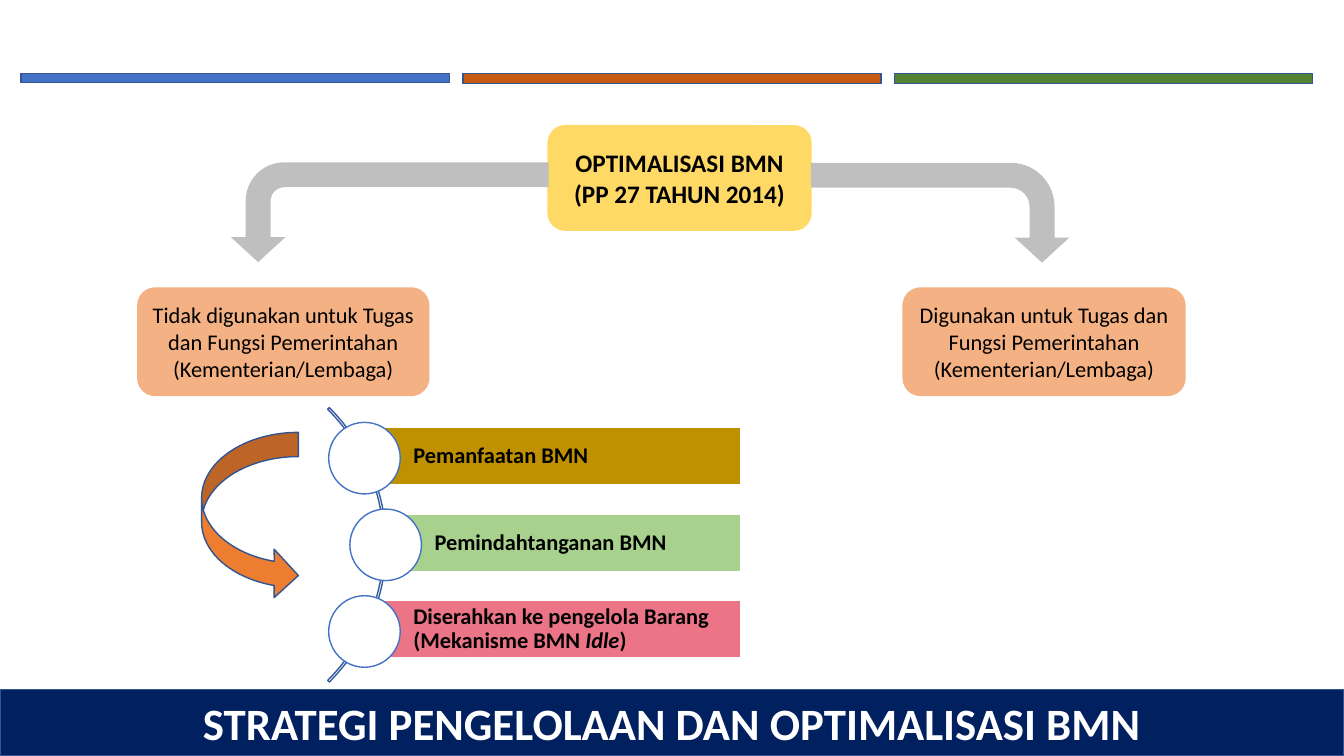
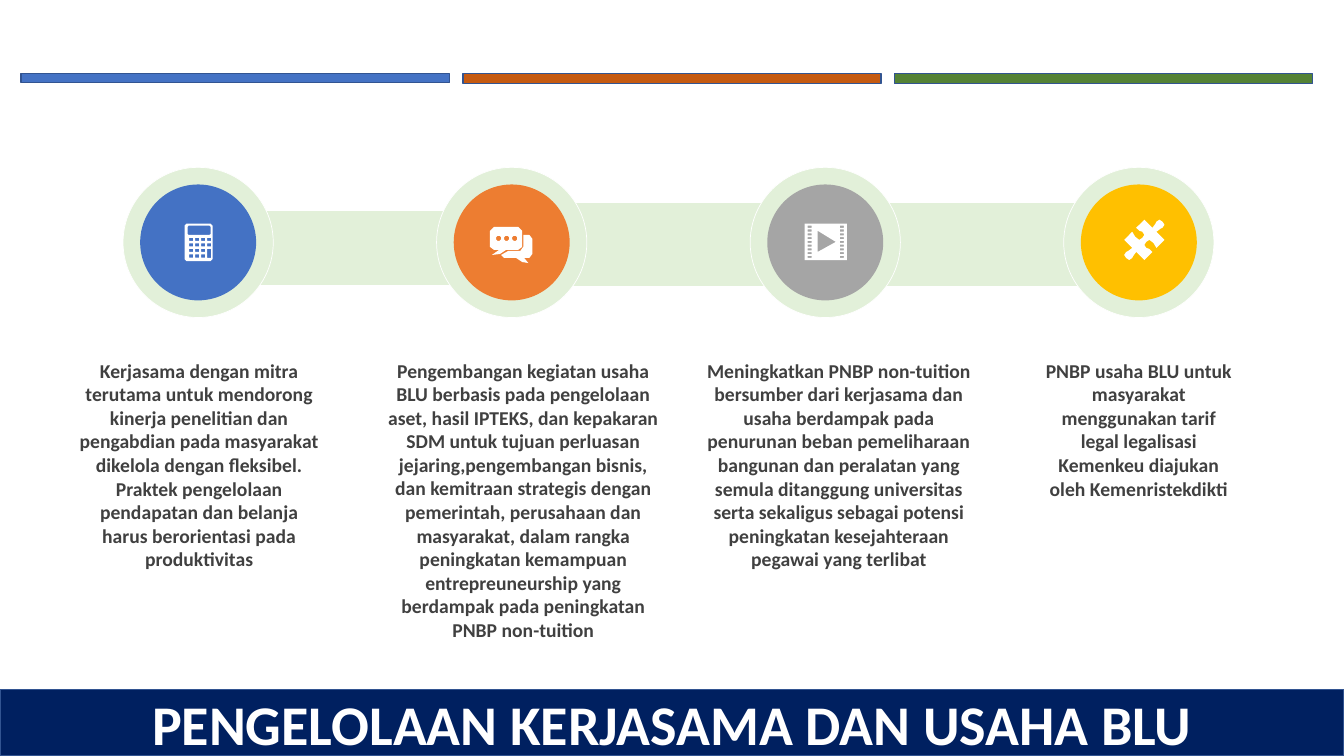
from pptx import Presentation
from pptx.dml.color import RGBColor as Rgb
from pptx.enum.shapes import MSO_SHAPE as Geo
from pptx.enum.text import MSO_ANCHOR as Anchor, PP_ALIGN as Align
from pptx.util import Inches, Pt

FONT = "Calibri"
HUES = {
    "white": "FFFFFF", "black": "000000", "text": "404040", "navy": "002060",
    "edge": "325491", "arc": "365B9D", "blue": "4472C4", "rust": "C55A11",
    "green": "548235", "orange": "ED7D31", "gray": "A5A5A5", "gold": "FFC000",
    "sun": "FFD966", "peach": "F4B183", "silver": "BFBFBF", "ochre": "BF9000",
    "leaf": "A9D18E", "rose": "EB7586", "mint": "E2F0D9",
}


# Basic elements
def hue(name):
    return Rgb.from_string(HUES[name])


def paint(shape, fill=None, line=None, width=1):
    shape.shadow.inherit = False
    if fill:
        shape.fill.solid()
        shape.fill.fore_color.rgb = hue(fill)
    else:
        shape.fill.background()
    if line:
        shape.line.color.rgb = hue(line)
        shape.line.width = Pt(width)
    else:
        shape.line.fill.background()
    return shape


def draw(slide, kind, box, fill=None, line=None, width=1, turn=0, adj=()):
    shape = slide.shapes.add_shape(kind, *map(Inches, box))
    shape.rotation = turn
    for i, value in enumerate(adj):
        shape.adjustments[i] = value
    return paint(shape, fill, line, width)


def write(shape, runs, size, color="black", bold=False, align=Align.CENTER,
          anchor=Anchor.MIDDLE):
    """Fill a shape with one paragraph; runs are (text, italic) pairs."""
    frame = shape.text_frame
    frame.word_wrap = True
    frame.vertical_anchor = anchor
    para = frame.paragraphs[0]
    para.alignment = align
    font = para.font
    font.name, font.size, font.bold = FONT, Pt(size), bold
    font.color.rgb = hue(color)
    for text, slant in runs:
        run = para.add_run()
        run.text = text
        if slant:
            run.font.italic = True
    return para


# Shared frame: three top bars and the title band
def start(deck, title, size):
    slide = deck.slides.add_slide(deck.slide_layouts[6])
    bars = [(0.21, 4.25, 0.09, "blue"), (4.59, 4.15, 0.1, "rust"),
            (8.87, 4.15, 0.1, "green")]
    for left, wide, high, fill in bars:
        draw(slide, Geo.RECTANGLE, (left, 0.73, wide, high), fill, "edge")
    band = draw(slide, Geo.RECTANGLE, (0, 6.84, 13.33, 0.66), "navy", "edge")
    write(band, [(title, False)], size, "white", True)
    return slide


# Parts of the strategy slide
def card(slide, box, text, fill, size, bold=False):
    shape = draw(slide, Geo.ROUNDED_RECTANGLE, box, fill)
    write(shape, [(text, False)], size, bold=bold)


def bend(slide, box, head, flip=False):
    arrow = draw(slide, Geo.BENT_ARROW, box, "silver", turn=90,
                 adj=(0.25, 0.273, 0.25, head))
    if flip:
        arrow.element.spPr.xfrm.set("flipV", "1")


def option(slide, left, top, runs, fill):
    edge = left + 0.39
    bar = draw(slide, Geo.RECTANGLE, (edge, top + 0.05, 7.35 - edge, 0.57),
               fill, "white")
    para = write(bar, runs, 16, bold=True, align=Align.LEFT)
    para.line_spacing = 0.9
    frame = bar.text_frame
    frame.margin_left = Inches(0.45)
    frame.margin_top = frame.margin_right = frame.margin_bottom = Inches(0.04)
    draw(slide, Geo.OVAL, (left, top, 0.71, 0.71), "white", "blue")


def plans(deck):
    slide = start(deck, "STRATEGI PENGELOLAAN DAN OPTIMALISASI BMN", 32)
    card(slide, (5.43, 1.24, 2.62, 1.05), "OPTIMALISASI BMN (PP 27 TAHUN 2014)",
         "sun", 18, True)
    bend(slide, (8.83, 0.83, 0.99, 2.56), 0.438)
    bend(slide, (3.37, 0.53, 0.99, 3.15), 0.386, True)
    duty = "igunakan untuk Tugas dan Fungsi Pemerintahan (Kementerian/Lembaga)"
    card(slide, (8.95, 2.85, 2.81, 1.08), "D" + duty, "peach", 16)
    card(slide, (1.36, 2.85, 2.9, 1.08), "Tidak d" + duty, "peach", 16)

    # Options along the arc
    draw(slide, Geo.BLOCK_ARC, (-0.02, 3.48, 3.85, 3.85), line="arc",
         adj=(189, 27, 0.006))
    options = [
        (3.26, [("Pemanfaatan BMN", False)], "ochre"),
        (3.47, [("Pemindahtanganan BMN", False)], "leaf"),
        (3.26, [("Diserahkan ke pengelola Barang (Mekanisme BMN ", False),
                ("Idle", True), (")", False)], "rose"),
    ]
    for i, (left, runs, fill) in enumerate(options):
        option(slide, left, 4.19 + 0.86 * i, runs, fill)
    draw(slide, Geo.CURVED_RIGHT_ARROW, (2, 4.29, 0.96, 1.66), "orange", "edge")


# Icon outlines, in hundredths of an inch around the badge centre
def rect(left, top, wide, high):
    right, low = left + wide, top + high
    return [(left, top), (right, top), (right, low), (left, low)]


def oct(left, top, wide, high, cut):
    """Give the outline of a box with cut corners, from its top left."""
    right, low = left + wide, top + high
    return [(left + cut, top), (right - cut, top), (right, top + cut),
            (right, low - cut), (right - cut, low), (left + cut, low),
            (left, low - cut), (left, top + cut)]


def adder():
    keys = [rect(-9.5 + 6 * col, -5 + 5.5 * row, 4, 3)
            for row in range(4) for col in range(4) if row < 2 or col < 3]
    return [oct(-14, -19, 28, 37, 2), oct(-11, -17, 23, 9, 1), *keys,
            rect(8.5, 6, 4, 9)]


def chat():
    front = [(-18, -16), (6, -16), (10, -12), (10, 4), (6, 7), (-6, 7),
             (-12, 11), (-20, 12), (-13, 7), (-18, 7), (-22, 4), (-22, -12)]
    rear = [(11, -8), (17, -8), (20, -4), (20, 11), (17, 15), (12, 15),
            (16, 20), (10, 19), (4, 15), (-8, 15), (-11, 12), (-4, 8),
            (8, 8), (11, 4)]
    dots = [oct(-16 + 8 * i, -7, 5, 5, 1.5) for i in range(3)]
    return [front, rear, *dots]


def film():
    holes = [rect(left, -17 + 3.75 * row, 4, 2)
             for left in (-18, 14) for row in range(9)]
    return [rect(-21, -19, 42, 36), *holes, [(-8, -12), (-8, 9), (10, -1)]]


def puzzle():
    # A half turn of one side gives the other
    half = [(18, -18), (20, -15), (18, -12), (16, -11), (12, -8), (20, 0),
            (12, 8), (9, 3), (5, 0), (2, 2), (0, 5), (2, 8), (5, 9), (8, 12),
            (0, 20), (-8, 12), (-11, 16), (-12, 18), (-15, 20)]
    ring = half + [(-a, -b) for a, b in half]
    return [[(a + 5, b - 3) for a, b in ring]]


def trace(slide, x, y, rings):
    """Draw closed outlines as one white shape; inner ones are holes."""
    pen = None
    for ring in rings:
        spots = [(Inches(x + a / 100), Inches(y + b / 100)) for a, b in ring]
        if pen is None:
            pen = slide.shapes.build_freeform(*spots[0])
        else:
            pen.move_to(*spots[0])
        pen.add_line_segments(spots[1:], close=True)
    paint(pen.convert_to_shape(), "white")


# Parts of the business slide
def badge(slide, left, fill):
    draw(slide, Geo.OVAL, (left, 1.66, 1.49, 1.49), "mint", "white", 0.5)
    draw(slide, Geo.OVAL, (left + 0.17, 1.83, 1.15, 1.15), fill)


def note(slide, left, wide, high, text):
    box = slide.shapes.add_textbox(*map(Inches, (left, 3.51, wide, high)))
    write(box, [(text, False)], 14, "text", True, anchor=Anchor.TOP)


def trade(deck):
    slide = start(deck, "PENGELOLAAN KERJASAMA DAN USAHA BLU", 40)
    for box in [(5.08, 2.01, 2.71, 0.83), (7.67, 2.01, 3.64, 0.83),
                (1.97, 2.09, 3.33, 0.74)]:
        draw(slide, Geo.RECTANGLE, box, "mint", "white", 0.5)
    steps = [
        ("blue", adder, 0.67, 2.61, 2.22,
         "Kerjasama dengan mitra terutama untuk mendorong kinerja penelitian dan "
         "pengabdian pada masyarakat dikelola dengan fleksibel. Praktek "
         "pengelolaan pendapatan dan belanja harus berorientasi pada "
         "produktivitas"),
        ("orange", chat, 3.75, 2.88, 2.93,
         "Pengembangan kegiatan usaha BLU berbasis pada pengelolaan aset, hasil "
         "IPTEKS, dan kepakaran SDM untuk tujuan perluasan "
         "jejaring,pengembangan bisnis, dan kemitraan strategis dengan "
         "pemerintah, perusahaan dan masyarakat, dalam rangka peningkatan "
         "kemampuan entrepreuneurship yang berdampak pada peningkatan PNBP "
         "non-tuition"),
        ("gray", film, 6.88, 2.88, 2.22,
         "Meningkatkan PNBP non-tuition bersumber dari kerjasama dan usaha "
         "berdampak pada penurunan beban pemeliharaan bangunan dan peralatan "
         "yang semula ditanggung universitas serta sekaligus sebagai potensi "
         "peningkatan kesejahteraan pegawai yang terlibat"),
        ("gold", puzzle, 10.23, 2.13, 1.51,
         "PNBP usaha BLU untuk masyarakat menggunakan tarif legal legalisasi "
         "Kemenkeu diajukan oleh Kemenristekdikti"),
    ]
    for i, (fill, icon, left, wide, high, text) in enumerate(steps):
        start_x = 1.22 + 3.11 * i
        badge(slide, start_x, fill)
        note(slide, left, wide, high, text)
        trace(slide, start_x + 0.75, 2.41, icon())


def main():
    deck = Presentation()
    deck.slide_width, deck.slide_height = Inches(13.33), Inches(7.5)
    plans(deck)
    trade(deck)
    deck.save("out.pptx")


if __name__ == "__main__":
    main()
